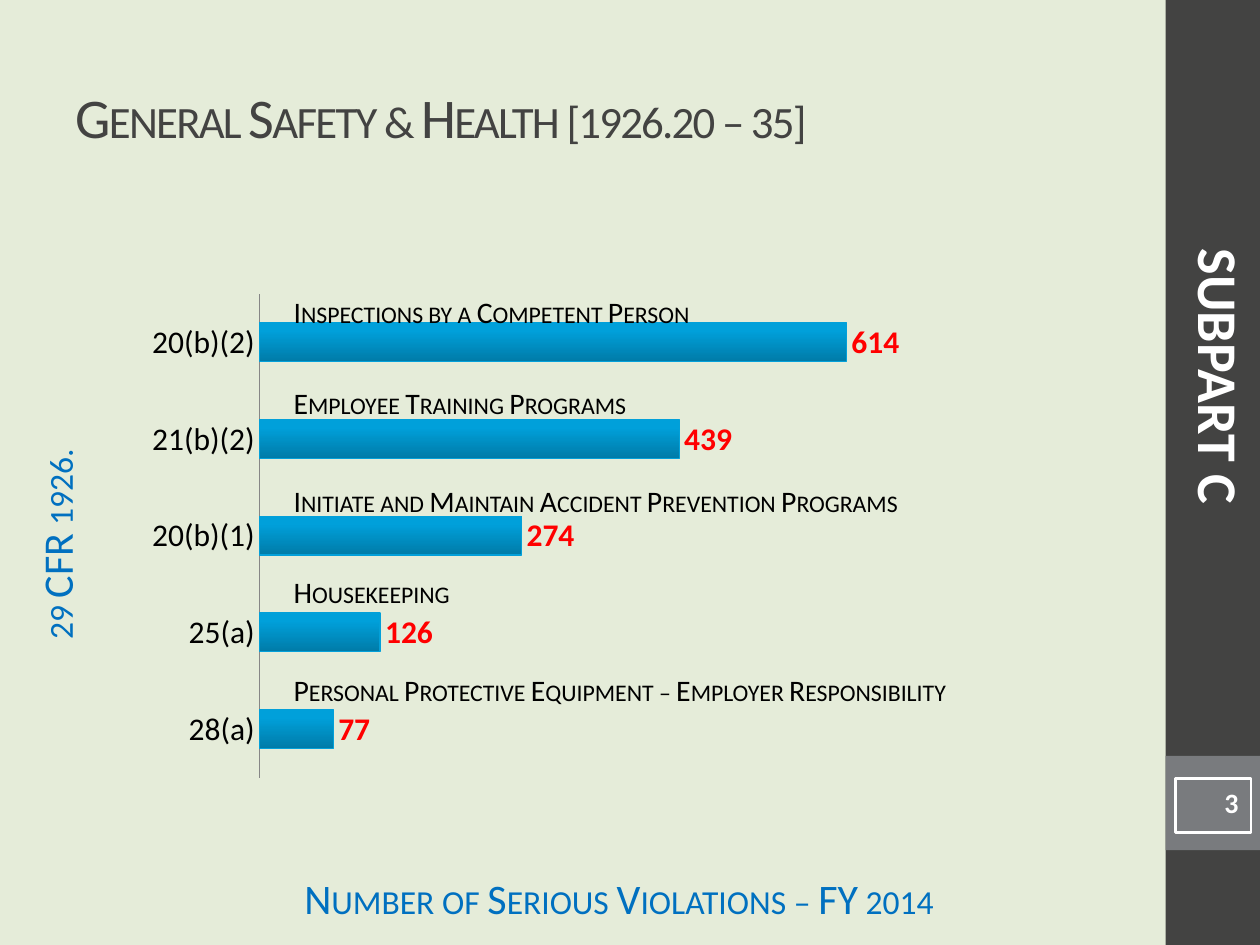
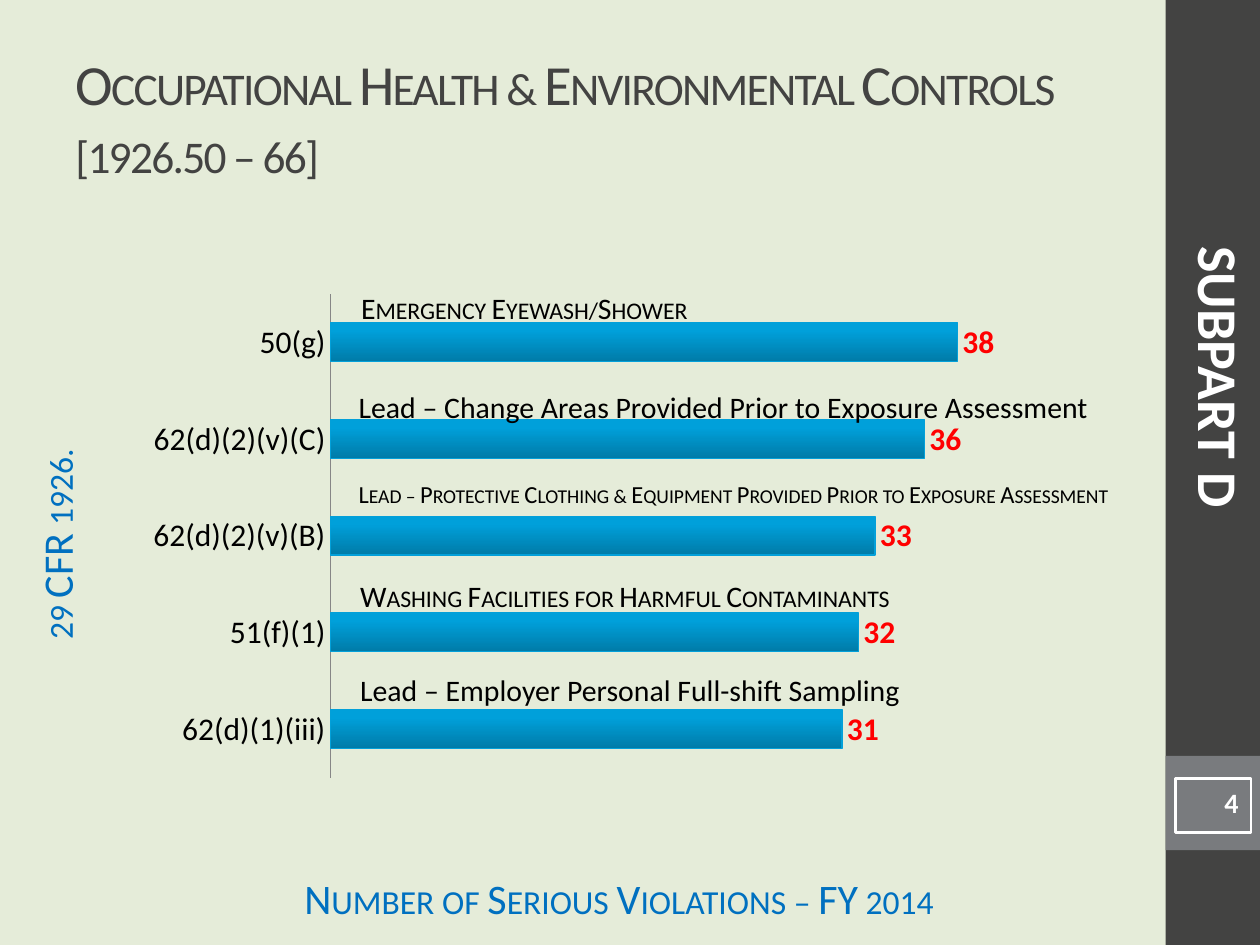
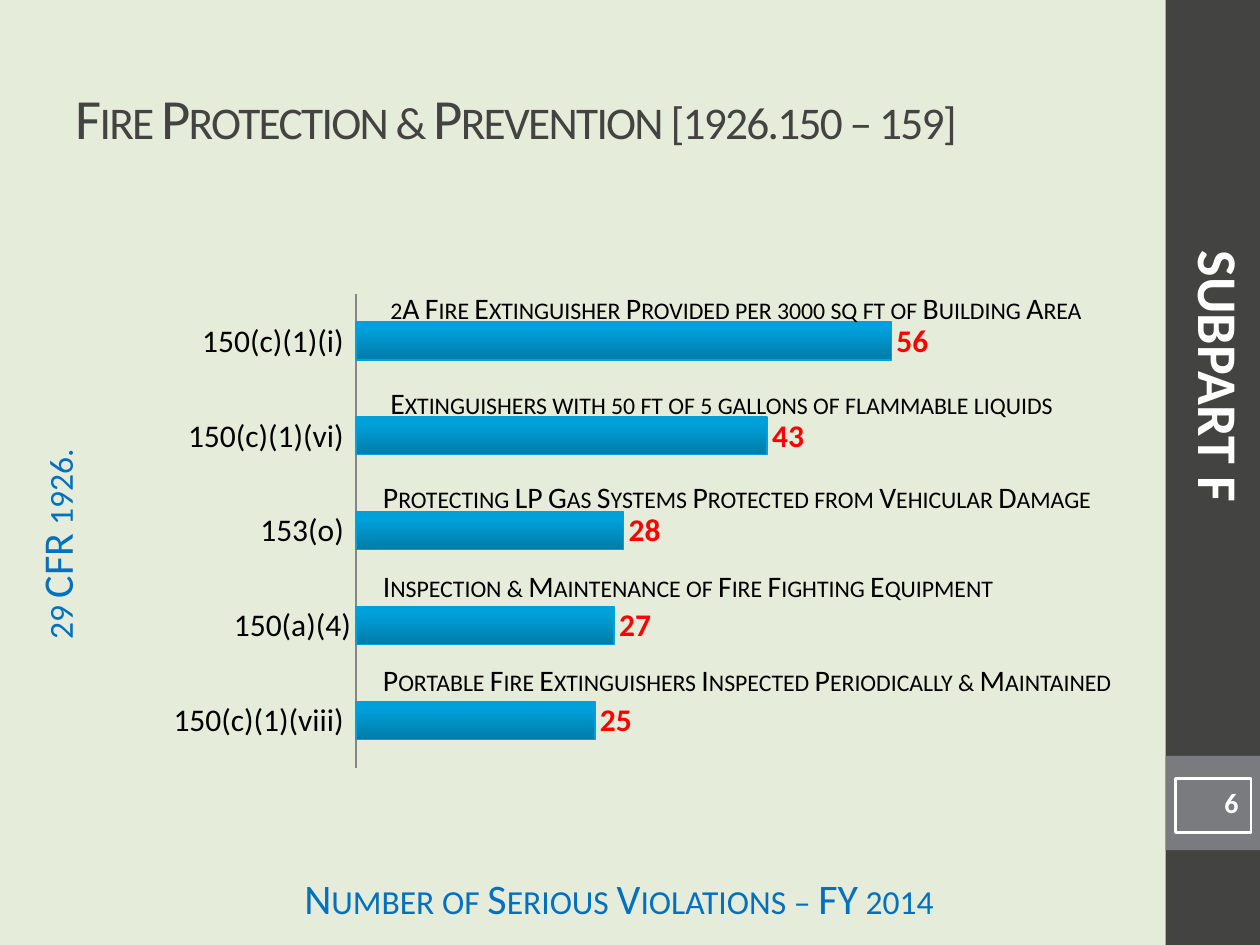
from dataclasses import dataclass

from pptx import Presentation
from pptx.chart.data import CategoryChartData
from pptx.dml.color import RGBColor
from pptx.enum.chart import XL_CHART_TYPE as ChartType
from pptx.enum.chart import XL_LABEL_POSITION as LabelPosition
from pptx.enum.chart import XL_TICK_MARK as TickMark
from pptx.enum.shapes import MSO_SHAPE as Shape
from pptx.enum.text import MSO_ANCHOR as Anchor
from pptx.enum.text import PP_ALIGN as Align
from pptx.util import Cm, Pt

FONT = "Calibri"
PAPER, BAND, BADGE = "E5ECD9", "434342", "797B7E"
WHITE, BLACK, BLUE, RED = "FFFFFF", "000000", "0070C0", "FF0000"
BAR_DARK, BAR_LIGHT, BAR_EDGE, AXIS = "007BA8", "00A0DA", "03A0D9", "868686"
PADDING = (0.25, 0.13, 0.25, 0.13)
LABEL_PADDING = (0.25, 0, 0.25, 0.13)
NO_PADDING = (0, 0, 0, 0)


@dataclass
class Box:
    left: float
    top: float
    width: float
    height: float

    def inner(self, left, top, width, height):
        return Box(self.left + left, self.top + top, width, height)

    def lengths(self):
        return Cm(self.left), Cm(self.top), Cm(self.width), Cm(self.height)


@dataclass
class Caption:
    text: str
    place: tuple
    padding: tuple = PADDING
    size: float = 17
    small_caps: bool = True


@dataclass
class Subpart:
    letter: str
    number: int
    title: str
    title_size: float
    chart_box: Box
    axis_maximum: int
    violations: dict
    captions: list


PAGE = Box(0, 0, 25.4, 19.05)
SIDEBAR = Box(23.5, 0, 1.9, 19.05)
TITLE = Box(1.27, 0.76, 21.16, 3.18)

SUBPARTS = [
    Subpart(
        "C", 3, "General Safety & Health [1926.20 – 35]", 32,
        Box(2.74, 5.72, 16.31, 10.16), 700,
        {"28(a)": 77, "25(a)": 126, "20(b)(1)": 274, "21(b)(2)": 439, "20(b)(2)": 614},
        [
            Caption("Inspections by a Competent Person", (3.18, 0.2, 9.7, 0.76), NO_PADDING),
            Caption("Employee Training Programs", (3.18, 2.03, 11, 0.71), NO_PADDING),
            Caption("Initiate and Maintain Accident Prevention Programs",
                    (3.18, 4.01, 17.58, 0.84), NO_PADDING),
            Caption("Housekeeping", (3.18, 5.84, 11, 0.71), NO_PADDING),
            Caption("Personal Protective Equipment – Employer Responsibility",
                    (3.18, 7.82, 16.48, 0.74), NO_PADDING),
        ],
    ),
    Subpart(
        "D", 4, "Occupational Health & Environmental Controls [1926.50 – 66]", 32.4,
        Box(2.74, 5.72, 17.58, 10.16), 40,
        {"62(d)(1)(iii)": 31, "51(f)(1)": 32, "62(d)(2)(v)(B)": 33,
         "62(d)(2)(v)(C)": 36, "50(g)": 38},
        [
            Caption("Emergency Eyewash/Shower", (4.29, 0, 7.24, 0.99)),
            Caption("Lead – Change Areas Provided Prior to Exposure Assessment",
                    (4.24, 1.98, 15.47, 0.99), small_caps=False),
            Caption("Lead – Protective Clothing & Equipment Provided Prior to Exposure Assessment",
                    (4.24, 3.81, 16.94, 0.86), size=14),
            Caption("Washing Facilities for Harmful Contaminants",
                    (4.52, 5.92, 13.69, 0.84), NO_PADDING),
            Caption("Lead – Employer Personal Full-shift Sampling",
                    (4.52, 7.82, 17.5, 0.94), NO_PADDING, small_caps=False),
        ],
    ),
    Subpart(
        "F", 6, "Fire Protection & Prevention [1926.150 – 159]", 32.4,
        Box(3.18, 5.72, 15.88, 9.96), 60,
        {"150(c)(1)(viii) ": 25, "150(a)(4)": 27, "153(o) ": 28,
         "150(c)(1)(vi) ": 43, "150(c)(1)(i) ": 56},
        [
            Caption("2A Fire Extinguisher Provided per 3000 sq ft of Building Area",
                    (4.44, 0, 17.35, 0.99)),
            Caption("Extinguishers with 50 ft of 5 gallons of flammable liquids",
                    (4.44, 1.9, 15.88, 0.99)),
            Caption("Protecting LP Gas Systems Protected from Vehicular Damage",
                    (4.29, 3.81, 15.39, 0.99)),
            Caption("Inspection & Maintenance of Fire Fighting Equipment",
                    (4.29, 5.59, 13.61, 0.99)),
            Caption("Portable Fire Extinguishers Inspected Periodically & Maintained",
                    (4.29, 7.49, 16.03, 0.99)),
        ],
    ),
]


def colour(code):
    return RGBColor.from_string(code)


def style_font(font, size, code, bold=False):
    font.name = FONT
    font.size = Pt(size)
    font.bold = bold
    font.color.rgb = colour(code)


def write(shape, text, size, code, bold=False, align=Align.LEFT, anchor=Anchor.TOP,
          padding=PADDING, small_caps=False, spacing=0):
    frame = shape.text_frame
    frame.word_wrap = True
    frame.vertical_anchor = anchor
    (frame.margin_left, frame.margin_top,
     frame.margin_right, frame.margin_bottom) = map(Cm, padding)
    para = frame.paragraphs[0]
    para.alignment = align
    para.add_run().text = text
    style_font(para.font, size, code, bold)
    if small_caps:
        para.font._element.set("cap", "small")
    if spacing:
        para.font._element.set("spc", str(spacing * 100))


def add_text(page, box, text, size, code, rotation=0, **style):
    shape = page.shapes.add_textbox(*box.lengths())
    shape.rotation = rotation
    write(shape, text, size, code, **style)


def add_rectangle(page, box, fill=None, line=None):
    shape = page.shapes.add_shape(Shape.RECTANGLE, *box.lengths())
    shape.shadow.inherit = False
    if fill:
        shape.fill.solid()
        shape.fill.fore_color.rgb = colour(fill)
    else:
        shape.fill.background()
    if line:
        shape.line.color.rgb = colour(line)
        shape.line.width = Pt(1.5)
    else:
        shape.line.fill.background()
    return shape


def add_sidebar(page, box, subpart):
    add_rectangle(page, box, BAND)
    add_rectangle(page, box.inner(0, 15.24, box.width, 1.9), BADGE)
    number = add_rectangle(page, box.inner(0.2, 15.7, 1.52, 1.09), line=WHITE)
    write(number, str(subpart.number), 16, WHITE, bold=True, align=Align.RIGHT)
    add_text(page, box.inner(-6.5, 6.78, 15.19, 1.63), f"SUBPART {subpart.letter}",
             32, WHITE, rotation=90, bold=True, align=Align.CENTER)


def add_axis_titles(page, box):
    style = dict(align=Align.CENTER, padding=LABEL_PADDING, small_caps=True)
    add_text(page, box.inner(5.28, 17.58, 14.4, 0.84),
             "Number of Serious Violations – FY 2014", 24, BLUE, **style)
    add_text(page, box.inner(-3.96, 10.24, 10.64, 1.47),
             "29 CFR 1926.", 24, BLUE, rotation=270, **style)


def add_violations_chart(page, box, violations, maximum):
    data = CategoryChartData()
    data.categories = list(violations)
    data.add_series("Series 1", list(violations.values()))
    chart = page.shapes.add_chart(ChartType.BAR_CLUSTERED, *box.lengths(), data).chart
    chart.has_legend = False
    chart.has_title = False
    style_font(chart.font, 10, BLACK)

    categories = chart.category_axis
    categories.major_tick_mark = categories.minor_tick_mark = TickMark.NONE
    categories.format.line.color.rgb = colour(AXIS)
    style_font(categories.tick_labels.font, 18, BLACK)
    values = chart.value_axis
    values.minimum_scale, values.maximum_scale = 0, maximum
    values.has_major_gridlines = False
    values.visible = False

    plot = chart.plots[0]
    plot.vary_by_categories = False
    plot.gap_width, plot.overlap = 150, -25
    plot.has_data_labels = True
    labels = plot.data_labels
    labels.show_value = True
    labels.position = LabelPosition.OUTSIDE_END
    style_font(labels.font, 18, RED, bold=True)

    bars = plot.series[0].format
    bars.fill.gradient()
    bars.fill.gradient_angle = 90
    for stop, position, code in zip(bars.fill.gradient_stops, (0, 0.8), (BAR_DARK, BAR_LIGHT)):
        stop.position = position
        stop.color.rgb = colour(code)
    bars.line.color.rgb = colour(BAR_EDGE)
    bars.line.width = Pt(0.75)


def add_captions(page, box, captions):
    for caption in captions:
        add_text(page, box.inner(*caption.place), caption.text, caption.size, BLACK,
                 padding=caption.padding, small_caps=caption.small_caps)


def add_subpart_slide(deck, subpart):
    page = deck.slides.add_slide(deck.slide_layouts[6])
    page.background.fill.solid()
    page.background.fill.fore_color.rgb = colour(PAPER)
    add_sidebar(page, SIDEBAR, subpart)
    add_axis_titles(page, PAGE)
    add_violations_chart(page, subpart.chart_box, subpart.violations, subpart.axis_maximum)
    add_text(page, TITLE, subpart.title, subpart.title_size, BAND,
             anchor=Anchor.MIDDLE, small_caps=True, spacing=-1)
    add_captions(page, subpart.chart_box, subpart.captions)


def main():
    deck = Presentation()
    deck.slide_width, deck.slide_height = Cm(PAGE.width), Cm(PAGE.height)
    for subpart in SUBPARTS:
        add_subpart_slide(deck, subpart)
    deck.save("out.pptx")


if __name__ == "__main__":
    main()
